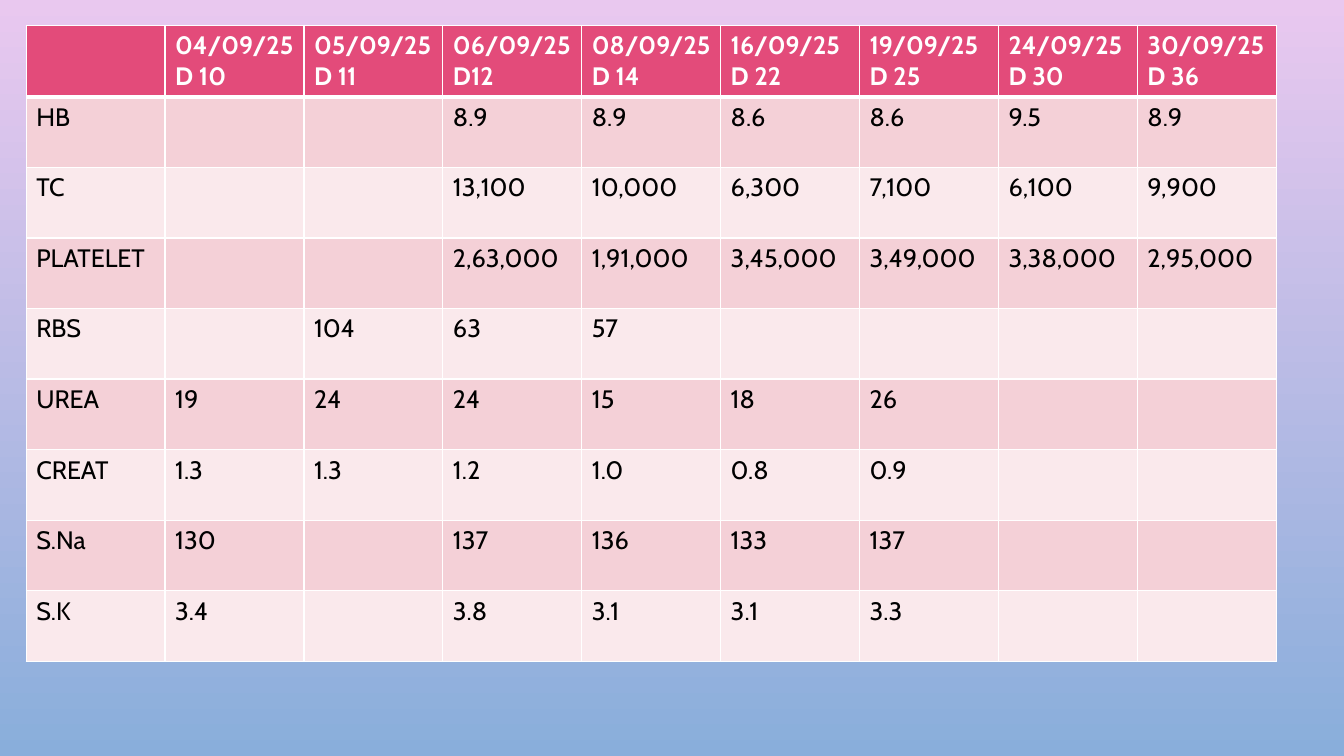
from pptx import Presentation
from pptx.dml.color import RGBColor as RGB
from pptx.oxml import parse_xml
from pptx.oxml.ns import nsdecls
from pptx.util import Inches, Pt

HEAD = ["", "04/09/25\nD 10", "05/09/25\nD 11", "06/09/25\nD12", "08/09/25\nD 14",
        "16/09/25\nD 22", "19/09/25\nD 25", "24/09/25\nD 30", "30/09/25\nD 36"]
TESTS = [
    ["HB", "", "", "8.9", "8.9", "8.6", "8.6", "9.5", "8.9"],
    ["TC", "", "", "13,100", "10,000", "6,300", "7,100", "6,100", "9,900"],
    ["PLATELET", "", "", "2,63,000", "1,91,000", "3,45,000", "3,49,000", "3,38,000", "2,95,000"],
    ["RBS", "", "104", "63", "57", "", "", "", ""],
    ["UREA", "19", "24", "24", "15", "18", "26", "", ""],
    ["CREAT", "1.3", "1.3", "1.2", "1.0", "0.8", "0.9", "", ""],
    ["S.Na", "130", "", "137", "136", "133", "137", "", ""],
    ["S.K", "3.4", "", "3.8", "3.1", "3.1", "3.3", "", ""],
]


def color(code):
    return RGB.from_string(code)


class Deck:
    font, size = "Cabin", Pt(18)
    white, black, rose = "FFFFFF", "000000", "E34B7A"
    bands = ["F4D0D7", "FAE9EC"]

    def __init__(self, prs):
        self.slide = prs.slides.add_slide(prs.slide_layouts[6])

    def backdrop(self, top, bottom):
        fill = self.slide.background.fill
        fill.gradient()
        fill.gradient_angle = 270
        for stop, code in zip(fill.gradient_stops, (top, bottom)):
            stop.color.rgb = color(code)

    def table(self, rows, left, top, width, height):
        frame = self.slide.shapes.add_table(
            len(rows), len(rows[0]), Inches(left), Inches(top), Inches(width), Inches(height))
        for r, row in enumerate(rows):
            for c, text in enumerate(row):
                self.cell(frame.table.cell(r, c), text, r)

    def cell(self, cell, text, row):
        first = row == 0
        # The rule under the header is drawn by both rows that share it.
        self.border(cell, {"L": 1, "R": 1, "T": 3 if row == 1 else 1, "B": 3 if first else 1})
        cell.fill.solid()
        cell.fill.fore_color.rgb = color(self.rose if first else self.bands[(row - 1) % 2])
        cell.text_frame.text = text
        for para in cell.text_frame.paragraphs:
            para.font.size = self.size
            for run in para.runs:
                font = run.font
                font.name, font.size, font.bold = self.font, self.size, first
                font.color.rgb = color(self.white if first else self.black)

    def border(self, cell, widths):
        props = cell._tc.get_or_add_tcPr()
        for side, width in widths.items():
            props.append(parse_xml(
                f'<a:ln{side} {nsdecls("a")} w="{Pt(width)}"><a:solidFill>'
                f'<a:srgbClr val="{self.white}"/></a:solidFill></a:ln{side}>'))


def main():
    prs = Presentation()
    prs.slide_width, prs.slide_height = Inches(13.33), Inches(7.5)
    deck = Deck(prs)
    deck.backdrop("E9C8EF", "89AEDB")
    deck.table([HEAD] + TESTS, 0.26, 0.25, 12.4, 6.3)
    prs.save("out.pptx")


if __name__ == "__main__":
    main()
